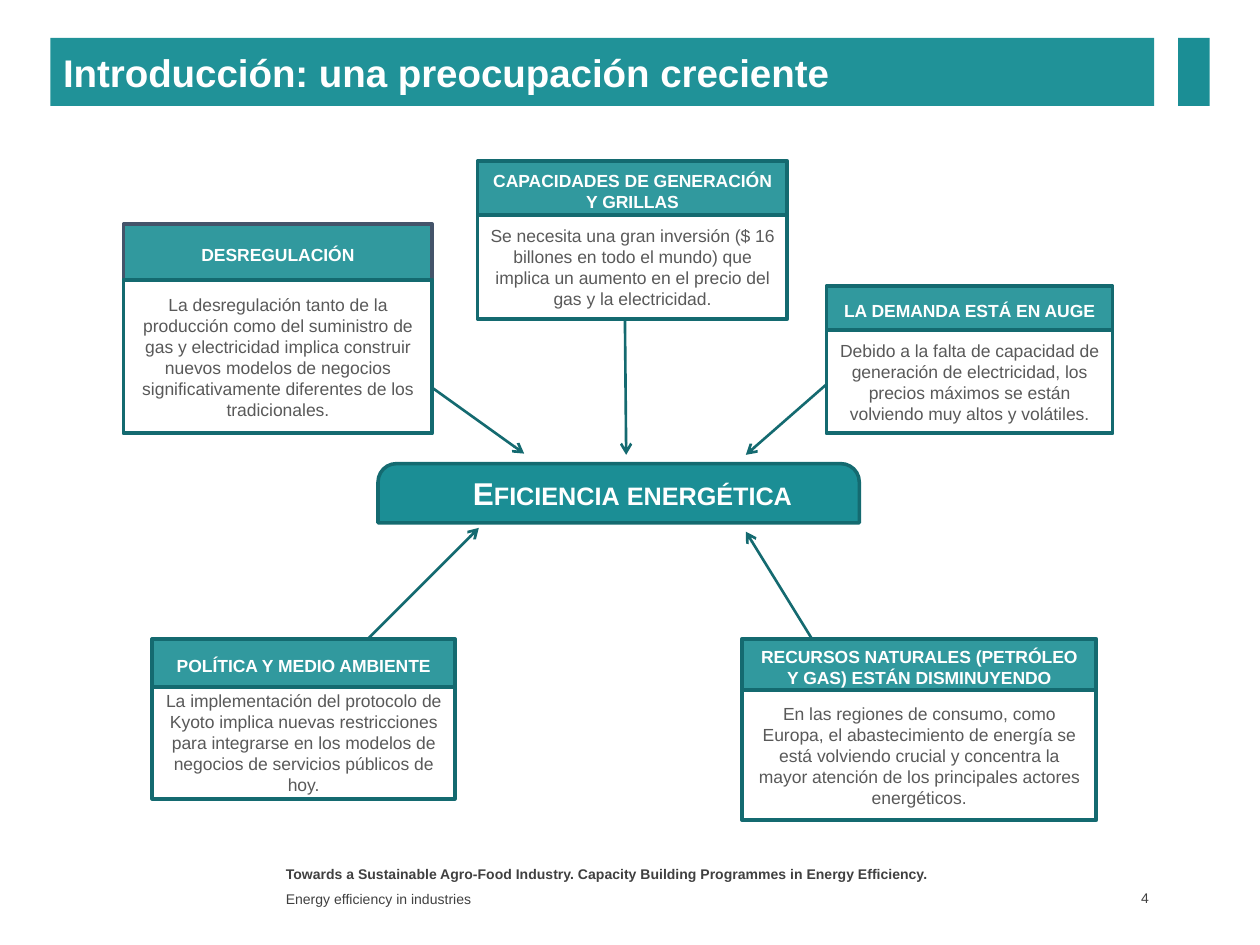
import pptx
import pptx.dml.color
import pptx.enum.shapes
import pptx.enum.text
import pptx.oxml.ns
import pptx.util
from lxml import etree

Inches = pptx.util.Inches
Pt = pptx.util.Pt
RGBColor = pptx.dml.color.RGBColor
MSO_SHAPE = pptx.enum.shapes.MSO_SHAPE
PP_ALIGN = pptx.enum.text.PP_ALIGN
MSO_ANCHOR = pptx.enum.text.MSO_ANCHOR
qn = pptx.oxml.ns.qn

WHITE = RGBColor(0xFF, 0xFF, 0xFF)
TITLE_TEAL = RGBColor(0x20, 0x92, 0x98)
TEAL = RGBColor(0x1B, 0x8E, 0x95)
HEADER_TEAL = RGBColor(0x31, 0x99, 0x9E)
DARK_TEAL = RGBColor(0x14, 0x6A, 0x70)
SLATE = RGBColor(0x44, 0x54, 0x6A)
BODY_GREY = RGBColor(0x59, 0x59, 0x59)
FOOTER_GREY = RGBColor(0x40, 0x40, 0x40)

# left, top, width, header height, body height, header line, heading, body
CARDS = [
    (0.98, 1.78, 2.45, 0.44, 1.22, SLATE, "DESREGULACIÓN",
     "La desregulación tanto de la producción como del suministro de gas y "
     "electricidad implica construir nuevos modelos de negocios "
     "significativamente diferentes de los tradicionales."),
    (3.79, 1.28, 2.46, 0.43, 0.82, DARK_TEAL,
     "CAPACIDADES DE GENERACIÓN Y GRILLAS",
     "Se necesita una gran inversión ($ 16 billones en todo el mundo) que "
     "implica un aumento en el precio del gas y la electricidad."),
    (6.56, 2.27, 2.27, 0.35, 0.82, DARK_TEAL, "LA DEMANDA ESTÁ EN AUGE",
     "Debido a la falta de capacidad de generación de electricidad, los "
     "precios máximos se están volviendo muy altos y volátiles."),
    (5.89, 5.07, 2.81, 0.41, 1.03, DARK_TEAL,
     "RECURSOS NATURALES (PETRÓLEO Y GAS) ESTÁN DISMINUYENDO",
     "En las regiones de consumo, como Europa, el abastecimiento de energía "
     "se está volviendo crucial y concentra la mayor atención de los "
     "principales actores energéticos."),
    (1.21, 5.07, 2.4, 0.38, 0.89, DARK_TEAL, "POLÍTICA Y MEDIO AMBIENTE",
     "La implementación del protocolo de Kyoto implica nuevas restricciones "
     "para integrarse en los modelos de negocios de servicios públicos de "
     "hoy."),
]

ARROWS = [
    (3.42, 3.07, 4.16, 3.6),
    (6.56, 3.05, 5.92, 3.61),
    (4.96, 2.54, 4.97, 3.61),
    (2.91, 5.08, 3.8, 4.19),
    (6.45, 5.08, 5.92, 4.22),
]


class SlideBuilder:
    """Holds the font and the slide being filled."""

    def __init__(self, slide, font="Arial"):
        self.s = slide
        self.font = font

    def put_text(self, sp, text, size, color, bold=False, align=PP_ALIGN.LEFT,
                 anchor=MSO_ANCHOR.MIDDLE, insets=(0.1, 0.05, 0.1, 0.05)):
        tf = sp.text_frame
        tf.word_wrap = True
        tf.auto_size = pptx.enum.text.MSO_AUTO_SIZE.NONE
        tf.vertical_anchor = anchor
        (tf.margin_left, tf.margin_top,
         tf.margin_right, tf.margin_bottom) = map(Inches, insets)
        p = tf.paragraphs[0]
        p.alignment = align
        r = p.add_run()
        r.text = text
        r.font.name = self.font
        r.font.size = Pt(size)
        r.font.bold = bold
        r.font.color.rgb = color
        return r

    def title(self, text, box):
        sp = self.s.shapes.title
        sp.left, sp.top, sp.width, sp.height = map(Inches, box)
        sp.fill.solid()
        sp.fill.fore_color.rgb = TITLE_TEAL
        self.put_text(sp, text, 22, WHITE, bold=True)

    def text(self, text, box, size, color, **style):
        sp = self.s.shapes.add_textbox(*map(Inches, box))
        return self.put_text(sp, text, size, color, **style)

    def shape(self, kind, box, fill, line=None, width=2.25, parent=None):
        shapes = (parent or self.s).shapes
        sp = shapes.add_shape(kind, *map(Inches, box))
        sp.shadow.inherit = False
        sp.fill.solid()
        sp.fill.fore_color.rgb = fill
        if line is None:
            sp.line.fill.background()
        else:
            sp.line.color.rgb = line
            sp.line.width = Pt(width)
        return sp

    def card(self, left, top, width, head_h, body_h, head_line, heading, body):
        group = self.s.shapes.add_group_shape()
        head = self.shape(MSO_SHAPE.RECTANGLE, (left, top, width, head_h),
                          HEADER_TEAL, head_line, parent=group)
        self.put_text(head, heading, 10, WHITE, bold=True,
                      align=PP_ALIGN.CENTER, insets=(0.1, 0.09, 0.1, 0.05))
        panel = self.shape(MSO_SHAPE.RECTANGLE,
                           (left, top + head_h, width, body_h),
                           WHITE, DARK_TEAL, parent=group)
        self.put_text(panel, body, 10, BODY_GREY, align=PP_ALIGN.CENTER,
                      insets=(0.1, 0.04, 0.1, 0.04))

    def arrow(self, *ends):
        line = self.s.shapes.add_connector(
            pptx.enum.shapes.MSO_CONNECTOR.STRAIGHT, *map(Inches, ends))
        line.line.color.rgb = DARK_TEAL
        line.line.width = Pt(1.5)
        spPr = line._element.spPr
        etree.SubElement(spPr.find(qn("a:ln")), qn("a:tailEnd"), type="arrow")
        etree.SubElement(spPr, qn("a:effectLst"))


def main():
    prs = pptx.Presentation()
    prs.slide_width, prs.slide_height = Inches(10), Inches(7.5)
    b = SlideBuilder(prs.slides.add_slide(prs.slide_layouts[5]))

    b.title("Introducción: una preocupación creciente", (0.4, 0.3, 8.76, 0.54))
    b.shape(MSO_SHAPE.RECTANGLE, (9.35, 0.3, 0.25, 0.54), TEAL)

    for card in CARDS:
        b.card(*card)
    for ends in ARROWS:
        b.arrow(*ends)

    hub = b.shape(MSO_SHAPE.ROUND_2_SAME_RECTANGLE, (3, 3.68, 3.82, 0.47),
                  TEAL, DARK_TEAL, width=2)
    hub.adjustments[0] = 0.31
    r = b.text("Eficiencia energética", (3.06, 3.71, 3.92, 0.4), 18, WHITE,
               bold=True, align=PP_ALIGN.CENTER, anchor=MSO_ANCHOR.TOP)
    r.font._element.set("cap", "small")

    b.text("Towards a Sustainable Agro-Food Industry. Capacity Building "
           "Programmes in Energy Efficiency.", (2.17, 6.82, 5.5, 0.21), 8,
           FOOTER_GREY, bold=True, anchor=MSO_ANCHOR.TOP)
    b.text("Energy efficiency in industries", (2.17, 7.04, 5.5, 0.19), 8,
           FOOTER_GREY)
    b.text("4", (8.6, 7.03, 0.56, 0.2), 8, FOOTER_GREY, align=PP_ALIGN.RIGHT,
           insets=(0.1, 0.05, 0.04, 0.05))

    prs.save("out.pptx")


if __name__ == "__main__":
    main()
